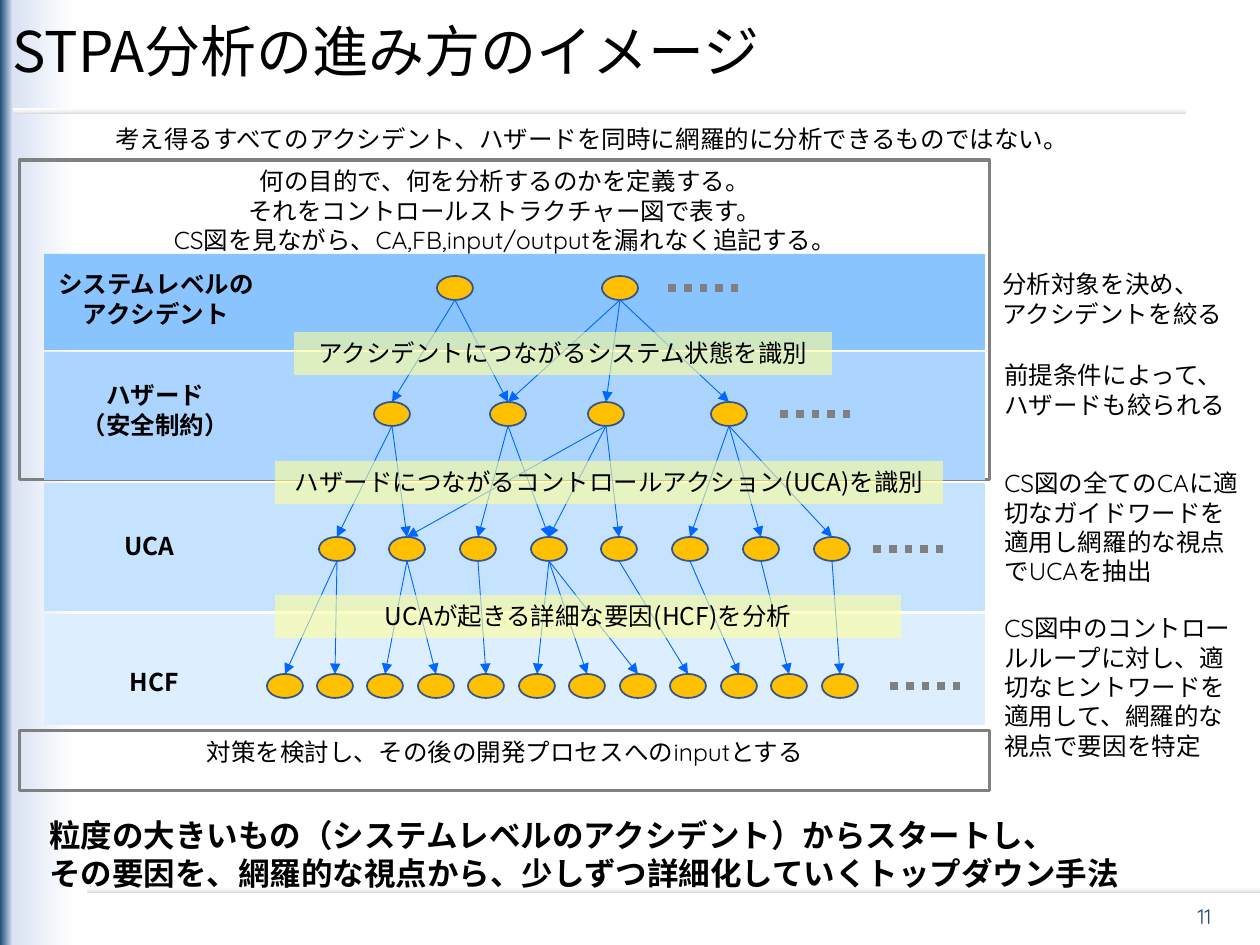
from dataclasses import dataclass
from typing import NamedTuple

from lxml import etree
from pptx import Presentation
from pptx import util as u
from pptx.dml.color import RGBColor
from pptx.enum import dml, shapes, text
from pptx.oxml.ns import qn

EMU_PER_PX = 914400 / 126


@dataclass(frozen=True)
class Theme:
    ink: str = "000000"
    frame: str = "808080"
    node: str = "FFC000"
    node_edge: str = "325491"
    arrow: str = "0066FF"
    step: str = "FFFF99"
    page: str = "1F4E79"
    backdrop: tuple = ((0, "1F4E79"), (1, "DAE3F3"), (6, "FFFFFF"))
    rule: tuple = ((0, "D9D9D9"), (48, "F2F2F2"), (100, "FFFFFF"))
    sans: str = "Noto Sans CJK JP"
    rounded: str = "Quicksand"
    title_size: int = 32
    summary_size: int = 18
    body_size: int = 14
    page_size: int = 12


THEME = Theme()


class Box(NamedTuple):
    x: int
    y: int
    w: int
    h: int


@dataclass(frozen=True)
class Copy:
    lines: tuple[str, ...]
    font: str = THEME.rounded
    size: int = THEME.body_size
    color: str = THEME.ink
    bold: bool = False
    align: text.PP_ALIGN = text.PP_ALIGN.LEFT
    anchor: text.MSO_ANCHOR = text.MSO_ANCHOR.TOP


@dataclass(frozen=True)
class Level:
    band: Box
    color: str
    label_box: Box
    label: tuple[str, ...]
    centers: tuple[int, ...]
    y: int
    dots_x: int
    links: tuple[tuple[int, int], ...] = ()


CENTER = text.PP_ALIGN.CENTER
NODE_W, NODE_H, DOTS_W = 36, 24, 70

LEVELS = (
    Level(Box(44, 254, 941, 96), "89C4FF", Box(44, 263, 224, 72),
          ("システムレベルの", "アクシデント"), (455, 620), 288, 668,
          ((0, 0), (0, 1), (1, 1), (1, 2), (1, 3))),
    Level(Box(44, 352, 941, 128), "ABD5FF", Box(69, 374, 173, 72),
          ("ハザード", "（安全制約）"), (392, 508, 606, 729), 414, 780,
          ((0, 0), (0, 1), (1, 2), (1, 3), (2, 1), (2, 3), (2, 4),
           (3, 5), (3, 6), (3, 7))),
    Level(Box(44, 483, 941, 128), "C5E2FF", Box(105, 525, 89, 43),
          ("UCA",), tuple(337 + 495 * i // 7 for i in range(8)), 549, 873,
          ((0, 0), (0, 1), (1, 2), (1, 3), (2, 4), (3, 5), (3, 6), (3, 7),
           (4, 8), (5, 9), (6, 10), (7, 11))),
    Level(Box(44, 614, 941, 111), "DDEEFF", Box(116, 661, 77, 43),
          ("HCF",), tuple(285 + 555 * i // 11 for i in range(12)), 686, 890),
)

STEPS = (
    (Box(294, 332, 538, 43), "アクシデントにつながるシステム状態を識別"),
    (Box(275, 461, 668, 43), "ハザードにつながるコントロールアクション(UCA)を識別"),
    (Box(275, 595, 626, 43), "UCAが起きる詳細な要因(HCF)を分析"),
)

FRAMES = (
    (Box(20, 160, 970, 320),
     ("何の目的で、何を分析するのかを定義する。",
      "それをコントロールストラクチャー図で表す。",
      "CS図を見ながら、CA,FB,input/outputを漏れなく追記する。")),
    (Box(20, 731, 970, 60),
     ("対策を検討し、その後の開発プロセスへのinputとする",)),
)

NOTES = (
    (Box(103, 118, 980, 43),
     ("考え得るすべてのアクシデント、ハザードを同時に網羅的に分析できるものではない。",)),
    (Box(990, 263, 268, 72), ("分析対象を決め、", "アクシデントを絞る")),
    (Box(992, 354, 267, 72), ("前提条件によって、", "ハザードも絞られる")),
    (Box(992, 462, 267, 131),
     ("CS図の全てのCAに適切なガイドワードを適用し網羅的な視点でUCAを抽出",)),
    (Box(992, 607, 266, 161),
     ("CS図中のコントロールループに対し、適切なヒントワードを適用して、網羅的な視点で要因を特定",)),
)


def px(value: int) -> u.Emu:
    return u.Emu(round(value * EMU_PER_PX))


def rgb(color: str) -> RGBColor:
    return RGBColor.from_string(color)


def set_gradient(fill, holder, stops: tuple, angle: int) -> None:
    fill.gradient()
    gradient = next(holder.iter(qn("a:gradFill")))
    stop_list = gradient.find(qn("a:gsLst"))
    for stop in list(stop_list):
        stop_list.remove(stop)
    for percent, color in stops:
        stop = etree.SubElement(stop_list, qn("a:gs"), pos=str(percent * 1000))
        etree.SubElement(stop, qn("a:srgbClr"), val=color)
    gradient.find(qn("a:lin")).set("ang", str(angle * 60000))


def write(shape, copy: Copy) -> None:
    frame = shape.text_frame
    frame.auto_size = text.MSO_AUTO_SIZE.NONE
    frame.word_wrap = copy.align != CENTER
    frame.vertical_anchor = copy.anchor
    for i, line in enumerate(copy.lines):
        paragraph = frame.add_paragraph() if i else frame.paragraphs[0]
        paragraph.text = line
        paragraph.alignment = copy.align
        font = paragraph.font
        font.name, font.size, font.bold = copy.font, u.Pt(copy.size), copy.bold
        font.color.rgb = rgb(copy.color)
        latin = next(paragraph._p.iter(qn("a:latin")))
        latin.addnext(latin.makeelement(qn("a:ea"), {"typeface": THEME.sans}))


def add_text(slide, box: Box, copy: Copy) -> None:
    write(slide.shapes.add_textbox(*map(px, box)), copy)


def add_block(slide, box: Box, fill: str | None = None, edge: str | None = None,
              width: float = 1, kind=shapes.MSO_SHAPE.RECTANGLE):
    block = slide.shapes.add_shape(kind, *map(px, box))
    block.shadow.inherit = False
    if fill:
        block.fill.solid()
        block.fill.fore_color.rgb = rgb(fill)
    else:
        block.fill.background()
    if edge:
        block.line.color.rgb = rgb(edge)
        block.line.width = u.Pt(width)
    else:
        block.line.fill.background()
    return block


def add_line(slide, start: tuple[int, int], end: tuple[int, int], color: str, width: float):
    line = slide.shapes.add_connector(
        shapes.MSO_CONNECTOR.STRAIGHT, *map(px, (*start, *end)))
    line.line.color.rgb = rgb(color)
    line.line.width = u.Pt(width)
    etree.SubElement(line._element.spPr, qn("a:effectLst"))
    return line


def add_nodes(slide, level: Level) -> None:
    for x in level.centers:
        add_block(slide, Box(x - NODE_W // 2, level.y - NODE_H // 2, NODE_W, NODE_H),
                  THEME.node, THEME.node_edge, kind=shapes.MSO_SHAPE.OVAL)
    dots = add_line(slide, (level.dots_x, level.y),
                    (level.dots_x + DOTS_W, level.y), THEME.frame, 4.5)
    dots.line.dash_style = dml.MSO_LINE.ROUND_DOT


def add_links(slide, upper: Level, lower: Level) -> None:
    for source, target in upper.links:
        arrow = add_line(slide, (upper.centers[source], upper.y + NODE_H // 2),
                         (lower.centers[target], lower.y - NODE_H // 2), THEME.arrow, 0.5)
        etree.SubElement(arrow.line._get_or_add_ln(), qn("a:tailEnd"), type="triangle")


def main() -> None:
    deck = Presentation()
    deck.slide_width, deck.slide_height = px(1260), px(945)
    slide = deck.slides.add_slide(deck.slide_layouts[5])
    set_gradient(slide.background.fill, slide._element, THEME.backdrop, 0)

    title = slide.shapes.title
    title.left, title.top, title.width, title.height = map(px, (0, 15, 961, 79))
    write(title, Copy(("STPA分析の進み方のイメージ",), THEME.sans, THEME.title_size,
                      anchor=text.MSO_ANCHOR.MIDDLE))
    title.text_frame.paragraphs[0].line_spacing = 0.9

    for box in (Box(87, 887, 1173, 6), Box(13, 108, 1173, 6)):
        rule = add_block(slide, box)
        set_gradient(rule.fill, rule._element.spPr, THEME.rule, 270)
    for box, lines in FRAMES:
        write(add_block(slide, box, edge=THEME.frame, width=1.75), Copy(lines, align=CENTER))
    for level in LEVELS:
        add_block(slide, level.band, level.color)
        add_text(slide, level.label_box,
                 Copy(level.label, THEME.sans, bold=True, align=CENTER))
        add_nodes(slide, level)
    for upper, lower in zip(LEVELS, LEVELS[1:]):
        add_links(slide, upper, lower)
    for box, line in STEPS:
        step = add_block(slide, box, THEME.step)
        color = next(step._element.spPr.iter(qn("a:srgbClr")))
        etree.SubElement(color, qn("a:alpha"), val="60000")
        write(step, Copy((line,), THEME.sans, align=CENTER))
    for box, lines in NOTES:
        add_text(slide, box, Copy(lines))
    add_text(slide, Box(37, 810, 1207, 89), Copy(
        ("粒度の大きいもの（システムレベルのアクシデント）からスタートし、",
         "その要因を、網羅的な視点から、少しずつ詳細化していくトップダウン手法"),
        THEME.sans, THEME.summary_size, bold=True))
    add_text(slide, Box(1158, 895, 66, 42), Copy(
        ("11",), size=THEME.page_size, color=THEME.page,
        align=text.PP_ALIGN.RIGHT, anchor=text.MSO_ANCHOR.MIDDLE))
    deck.save("out.pptx")


if __name__ == "__main__":
    main()
